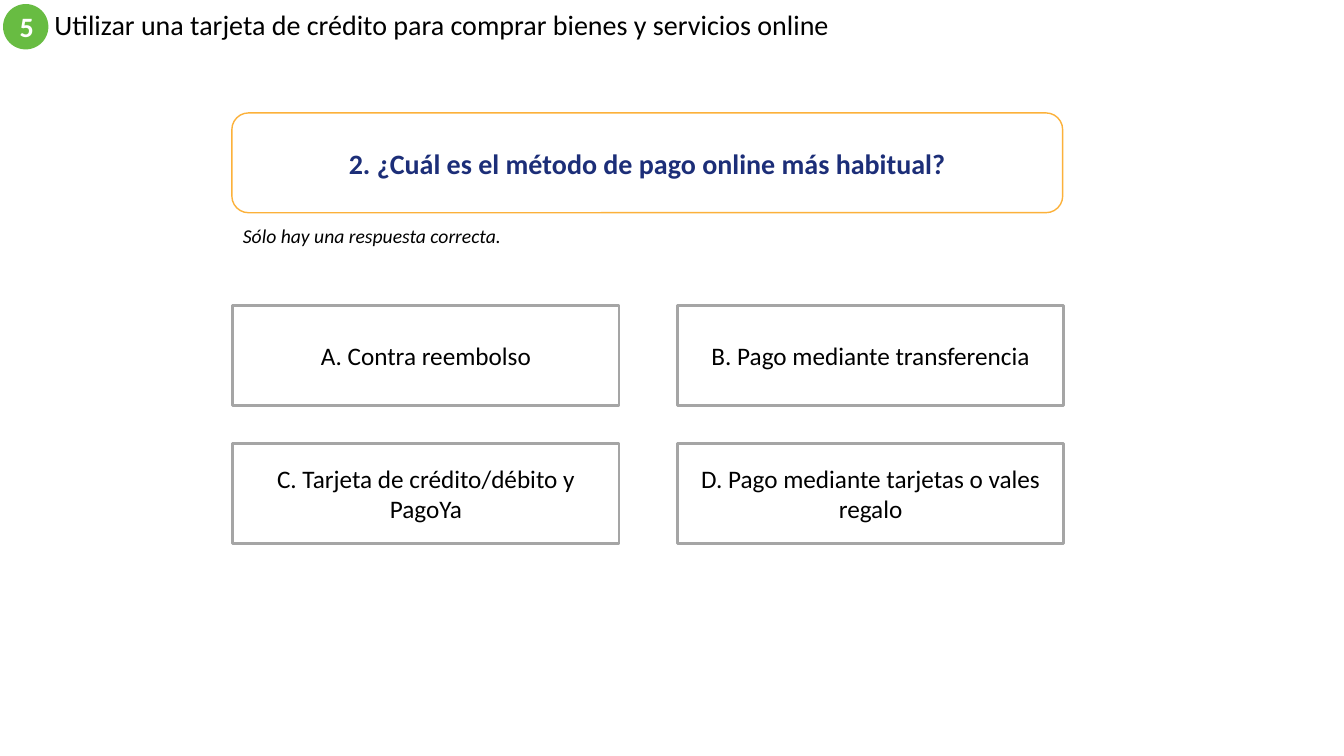
from pptx import Presentation
from pptx import util as u
from pptx.dml.color import RGBColor
from pptx.enum import shapes, text

COLORS = {
    "black": "000000",
    "white": "FFFFFF",
    "green": "68BC42",
    "orange": "FCB13A",
    "navy": "1C2E78",
    "gray": "A5A5A5",
}
ANSWERS = [
    "A. Contra reembolso",
    "B. Pago mediante transferencia",
    "C. Tarjeta de crédito/débito y PagoYa",
    "D. Pago mediante tarjetas o vales regalo",
]
MIDDLE = text.MSO_ANCHOR.MIDDLE
LEFT, CENTER = text.PP_ALIGN.LEFT, text.PP_ALIGN.CENTER


def rgb(name):
    return RGBColor.from_string(COLORS[name])


def write(sp, words, size, color="black", align=LEFT, anchor=MIDDLE, **font):
    tf = sp.text_frame
    frame = dict(word_wrap=True, auto_size=text.MSO_AUTO_SIZE.NONE,
                 vertical_anchor=anchor,
                 margin_left=u.Inches(0.1), margin_right=u.Inches(0.1),
                 margin_top=u.Inches(0.05), margin_bottom=u.Inches(0.05))
    for name, value in frame.items():
        setattr(tf, name, value)
    p = tf.paragraphs[0]
    p.alignment = align
    r = p.add_run()
    r.text = words
    for name, value in dict(name="Calibri", size=u.Pt(size), **font).items():
        setattr(r.font, name, value)
    r.font.color.rgb = rgb(color)
    return p


def add_box(s, kind, box, fill="white", line=None, width=1):
    sp = s.shapes.add_shape(kind, *map(u.Inches, box))
    sp.shadow.inherit = False
    sp.fill.solid()
    sp.fill.fore_color.rgb = rgb(fill)
    if line:
        sp.line.color.rgb = rgb(line)
        sp.line.width = u.Pt(width)
    else:
        sp.line.fill.background()
    return sp


def add_header(s, x, y, number, words):
    size = 0.45
    title = s.shapes.title
    place = dict(left=x + 0.41, top=y, width=8, height=size)
    for name, value in place.items():
        setattr(title, name, u.Inches(value))
    write(title, words, 20).line_spacing = 0.9
    badge = add_box(s, shapes.MSO_SHAPE.OVAL, (x, y, size, size), "green")
    write(badge, number, 20, "white", CENTER, bold=True)


def add_question(s, x, y, w, h, words, hint):
    """Place the framed question with its hint just below."""
    frame = add_box(s, shapes.MSO_SHAPE.ROUNDED_RECTANGLE, (x, y, w, h),
                    line="orange")
    frame.adjustments[0] = 0.167
    write(frame, words, 20, "navy", CENTER, bold=True)
    note = s.shapes.add_textbox(*map(u.Inches, (x + 0.01, y + h + 0.06, 3.28, 0.34)))
    write(note, hint, 14, anchor=text.MSO_ANCHOR.TOP, italic=True)


def add_answers(s, x, y, w, h, answers):
    """Fill the area with a two-column grid of answer boxes."""
    columns, box_w, box_h = 2, 3.83, 0.99
    rows = len(answers) // columns
    step_x = (w - box_w) / (columns - 1)
    step_y = (h - box_h) / (rows - 1)
    for i, words in enumerate(answers):
        row, col = divmod(i, columns)
        box = (x + col * step_x, y + row * step_y, box_w, box_h)
        sp = add_box(s, shapes.MSO_SHAPE.RECTANGLE, box, line="gray", width=2)
        write(sp, words, 18, align=CENTER)


def main():
    prs = Presentation()
    prs.slide_width, prs.slide_height = u.Inches(13.33), u.Inches(7.5)
    s = prs.slides.add_slide(prs.slide_layouts[5])
    add_header(s, 0.03, 0.04, "5",
               "Utilizar una tarjeta de crédito para comprar bienes y servicios online")
    add_question(s, 2.3, 1.12, 8.24, 0.99,
                 "2. ¿Cuál es el método de pago online más habitual?",
                 "Sólo hay una respuesta correcta.")
    add_answers(s, 2.31, 3.03, 8.24, 2.36, ANSWERS)
    prs.save("out.pptx")


if __name__ == "__main__":
    main()
